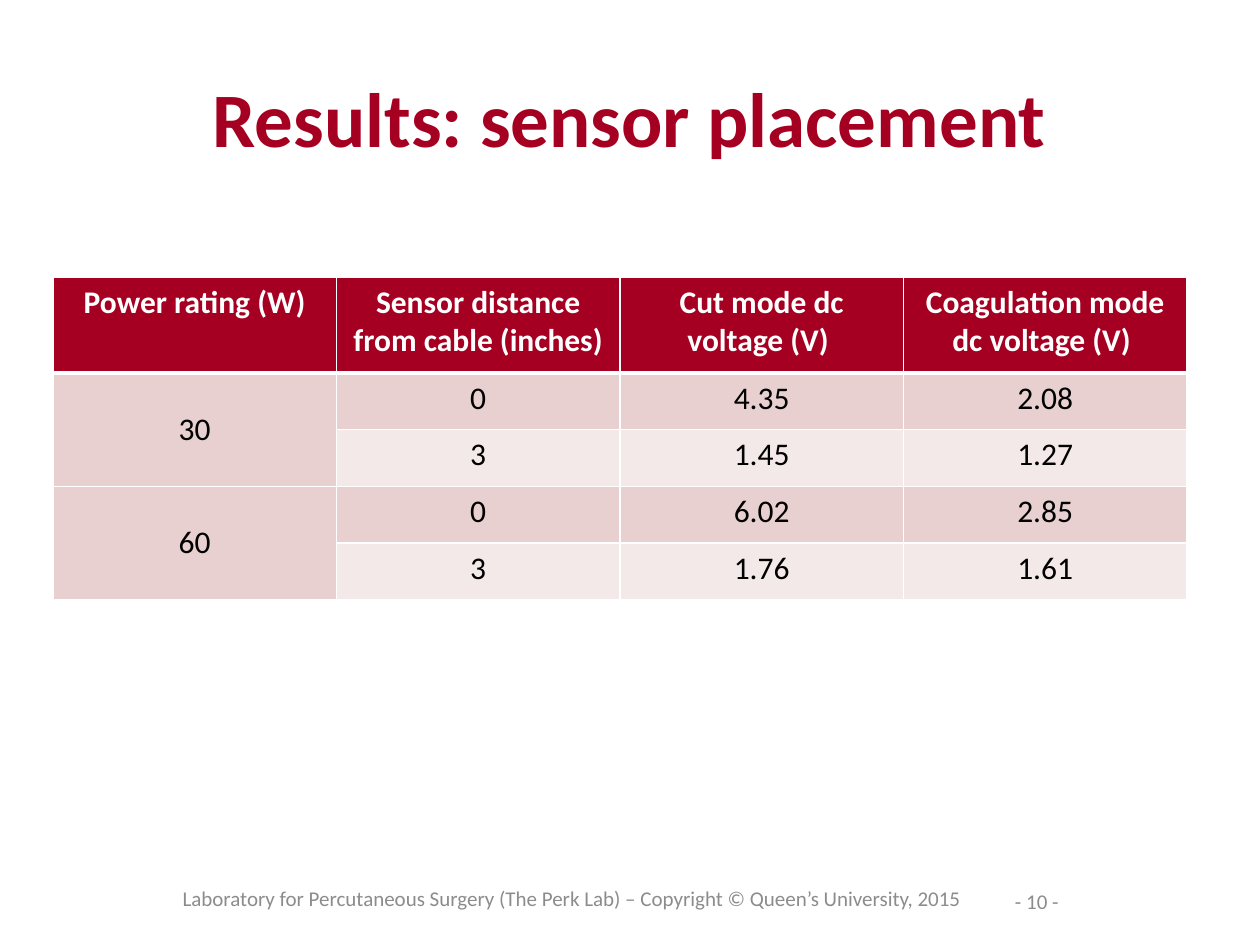
from lxml.etree import SubElement
from pptx import Presentation
from pptx.dml.color import RGBColor
from pptx.enum.text import MSO_ANCHOR, PP_ALIGN
from pptx.oxml.ns import qn
from pptx.util import Inches, Pt

CRIMSON = RGBColor(0xA5, 0x00, 0x21)
ROSE = RGBColor(0xE8, 0xD0, 0xD0)
PALE_ROSE = RGBColor(0xF4, 0xE9, 0xE9)
WHITE = RGBColor(0xFF, 0xFF, 0xFF)
BLACK = RGBColor(0x00, 0x00, 0x00)
GREY = RGBColor(0x8C, 0x8C, 0x8C)

TITLE_FORMAT = {"name": "Calibri", "size": Pt(44), "bold": True}
HEADER_FORMAT = {"name": "Calibri", "size": Pt(18), "bold": True}
BODY_FORMAT = {"name": "Calibri", "size": Pt(18), "bold": False}
FOOTER_FORMAT = {"name": "Calibri", "size": Pt(12), "bold": False}

HEADINGS = [
    "Power rating (W)",
    "Sensor distance from cable (inches)",
    "Cut mode dc voltage (V) ",
    "Coagulation mode dc voltage (V) ",
]
MEASUREMENTS = [
    ["30", "0", "4.35", "2.08"],
    ["", "3", "1.45", "1.27"],
    ["60", "0", "6.02", "2.85"],
    ["", "3", "1.76", "1.61"],
]
COLUMN_WIDTH = 2.25
HEADER_HEIGHT = 0.76
ROW_HEIGHT = 0.45


def write_text(text_frame, text, font_format, color, alignment=PP_ALIGN.CENTER):
    paragraph = text_frame.paragraphs[0]
    paragraph.alignment = alignment
    run = paragraph.add_run()
    run.text = text
    for attribute, value in font_format.items():
        setattr(run.font, attribute, value)
    run.font.color.rgb = color


def add_label(slide, place, text, font_format, color, alignment=PP_ALIGN.CENTER):
    text_box = slide.shapes.add_textbox(*[Inches(length) for length in place])
    text_frame = text_box.text_frame
    text_frame.word_wrap = True
    text_frame.vertical_anchor = MSO_ANCHOR.MIDDLE
    write_text(text_frame, text, font_format, color, alignment)


def add_borders(cell, row_index):
    widths = {
        "a:lnL": 1,
        "a:lnR": 1,
        "a:lnT": 3 if row_index == 1 else 1,
        "a:lnB": 3 if row_index == 0 else 1,
    }
    properties = cell._tc.get_or_add_tcPr()
    for tag, width in widths.items():
        line = SubElement(properties, qn(tag), w=str(Pt(width)))
        fill = SubElement(line, qn("a:solidFill"))
        SubElement(fill, qn("a:srgbClr"), val=str(WHITE))


def style_cell(cell, row_index, column_index, text):
    add_borders(cell, row_index)
    is_header = row_index == 0
    is_shaded = row_index % 2 == 1 or column_index == 0
    cell.fill.solid()
    cell.fill.fore_color.rgb = CRIMSON if is_header else ROSE if is_shaded else PALE_ROSE
    if column_index == 0 and not is_header:
        cell.vertical_anchor = MSO_ANCHOR.MIDDLE
    if text:
        font_format = HEADER_FORMAT if is_header else BODY_FORMAT
        write_text(cell.text_frame, text, font_format, WHITE if is_header else BLACK)


def add_results_table(slide, left, top):
    rows = [HEADINGS] + MEASUREMENTS
    width = COLUMN_WIDTH * len(HEADINGS)
    height = HEADER_HEIGHT + ROW_HEIGHT * len(MEASUREMENTS)
    table = slide.shapes.add_table(
        len(rows), len(HEADINGS), Inches(left), Inches(top), Inches(width), Inches(height)
    ).table
    for column in table.columns:
        column.width = Inches(COLUMN_WIDTH)
    for row_index, texts in enumerate(rows):
        table.rows[row_index].height = Inches(ROW_HEIGHT if row_index else HEADER_HEIGHT)
        for column_index, text in enumerate(texts):
            style_cell(table.cell(row_index, column_index), row_index, column_index, text)
    for first_row in range(1, len(rows), 2):
        table.cell(first_row, 0).merge(table.cell(first_row + 1, 0))


def main():
    presentation = Presentation()
    presentation.slide_width = Inches(10)
    presentation.slide_height = Inches(7.5)
    slide = presentation.slides.add_slide(presentation.slide_layouts[6])
    add_label(slide, (0.5, 0.3, 9, 1.25), "Results: sensor placement", TITLE_FORMAT, CRIMSON)
    add_results_table(slide, 0.42, 2.2)
    add_label(
        slide,
        (1.25, 6.93, 6.58, 0.4),
        "Laboratory for Percutaneous Surgery (The Perk Lab) – Copyright © Queen’s University, 2015",
        FOOTER_FORMAT,
        GREY,
    )
    add_label(slide, (7.92, 6.95, 0.58, 0.4), "- 10 -", FOOTER_FORMAT, GREY, PP_ALIGN.RIGHT)
    presentation.save("out.pptx")


if __name__ == "__main__":
    main()
